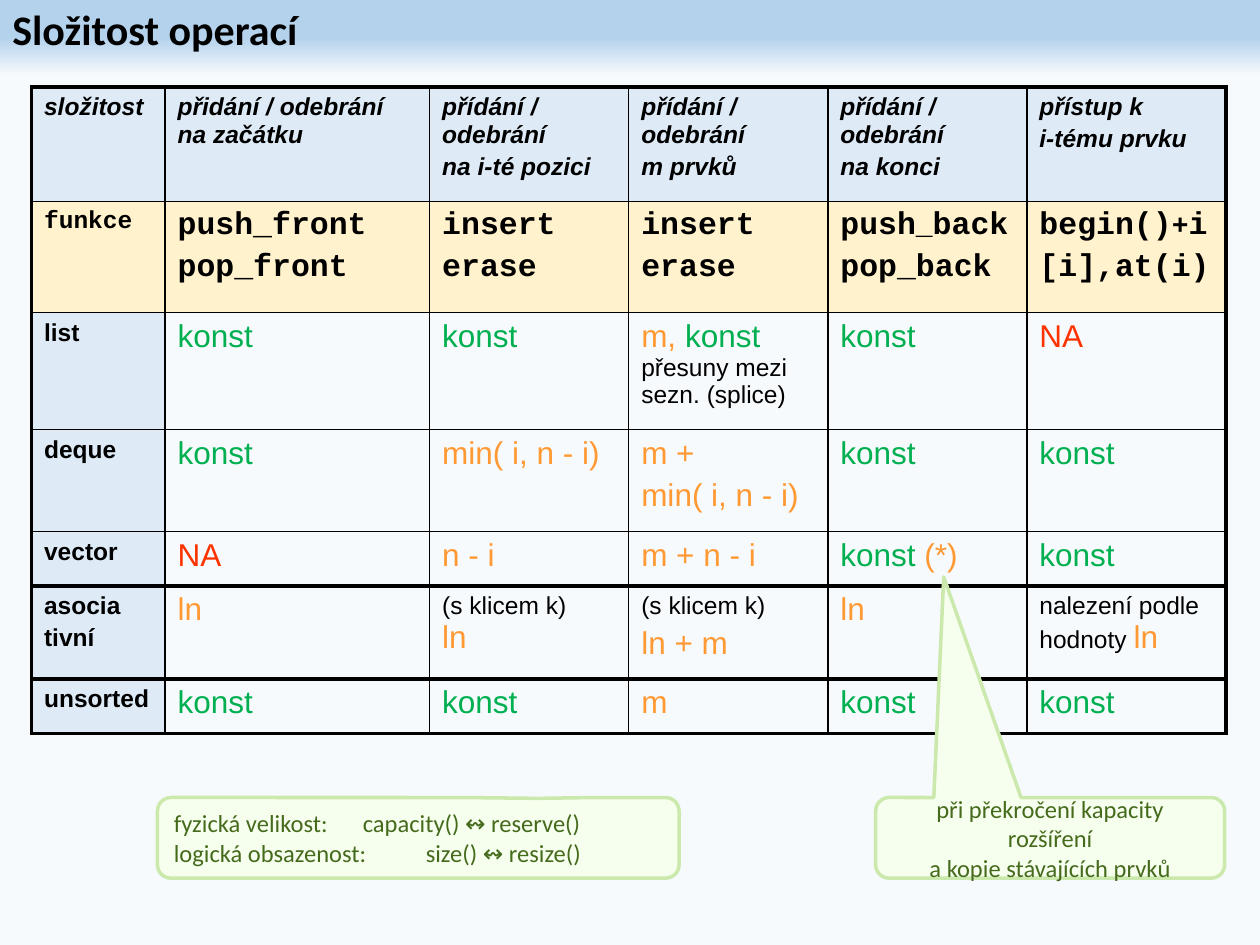
import pptx
import pptx.util
import pptx.dml.color
import pptx.enum.shapes
import pptx.enum.text
import pptx.oxml
from lxml import etree
from pptx.util import Inches

# Text styles: font, size, colour, bold, italic
STYLES = {
    "head": ("Arial", 14, "000000", True, True),
    "label": ("Arial", 14, "000000", True, False),
    "small code": ("Courier New", 14, "000000", True, False),
    "code": ("Courier New", 18, "000000", True, False),
    "sign": ("Courier New", 16, "000000", True, False),
    "good": ("Arial", 18, "00B050", False, False),
    "fair": ("Arial", 18, "FF9933", False, False),
    "bad": ("Arial", 18, "FF3300", False, False),
    "remark": ("Arial", 14, "000000", False, False),
    "callout": ("Calibri", 14, "456A1C", False, False),
    "title": ("Calibri", 24, "000000", True, False),
}


def lines(style, *texts):
    """One paragraph for each text, all in one style."""
    return [[(text, style)] for text in texts]


# Table content: each cell is a list of paragraphs, each paragraph a list of runs
KONST = lines("good", "konst")
NA = lines("bad", "NA")
LN = lines("fair", "ln")
INSERT = lines("code", "insert", "erase")

ROWS = [
    [lines("head", "složitost"),
     lines("head", "přidání / odebrání na začátku"),
     lines("head", "přídání / odebrání", "na i-té pozici"),
     lines("head", "přídání / odebrání", "m prvků"),
     lines("head", "přídání / odebrání", "na konci"),
     lines("head", "přístup k", "i-tému prvku")],
    [lines("small code", "funkce"),
     lines("code", "push_front", "pop_front"),
     INSERT,
     INSERT,
     [[("push", "code"), ("_", "sign"), ("back", "code")], [("pop_back", "code")]],
     [[("begin()", "code"), ("+", "sign"), ("i", "code")], [("[i],at(i)", "code")]]],
    [lines("label", "list"), KONST, KONST,
     [[("m, ", "fair"), ("konst\n", "good"), ("přesuny mezi sezn. (splice)", "remark")]],
     KONST, NA],
    [lines("label", "deque"), KONST, lines("fair", "min( i, n - i)"),
     lines("fair", "m +", "min( i, n - i)"), KONST, KONST],
    [lines("label", "vector"), NA, lines("fair", "n - i"), lines("fair", "m + n - i"),
     [[("konst ", "good"), ("(*)", "fair")]], KONST],
    [lines("label", "asocia", "tivní"), LN,
     [[("(s klicem k)\n", "remark"), ("ln", "fair")]],
     lines("remark", "(s klicem k)") + lines("fair", "ln + m"),
     LN,
     [[("nalezení podle hodnoty ", "remark"), ("ln", "fair")]]],
    [lines("label", "unsorted"), KONST, KONST, lines("fair", "m"), KONST, KONST],
]
COLUMN_WIDTHS = [1.06, 2.1] + [1.58] * 4
ROW_HEIGHTS = [0.91, 0.88, 0.93, 0.81, 0.43, 0.74, 0.43]
THICK_ROW_EDGES = {0, 5, 6, 7}
THICK_COLUMN_EDGES = {0, 6}
ROW_FILLS = {0: "DEEBF7", 1: "FFF2CC"}
LABEL_FILL = "DEEBF7"

# Callouts: left, width, pointer adjustments, alignment, paragraphs
ALIGN = pptx.enum.text.PP_ALIGN
CALLOUTS = [
    (6.95, 2.77, (-0.305, -3.236, 0.167), ALIGN.CENTER,
     lines("callout", "při překročení kapacity rozšíření\na kopie stávajících prvků")),
    (1.25, 4.14, (0.231, -0.489, 0.167), ALIGN.LEFT,
     lines("callout", "fyzická velikost:\tcapacity() ↭ reserve()",
           "logická obsazenost:\tsize() ↭ resize()")),
]
BACKGROUND_STOPS = [(0, "B5D2EC"), (4, "B5D2EC"), (8, "F7FAFD")]


def color(value):
    return pptx.dml.color.RGBColor.from_string(value)


def set_font(font, style):
    font.name, size, value, font.bold, font.italic = STYLES[style]
    font.size = pptx.util.Pt(size)
    font.color.rgb = color(value)


def write(frame, paragraphs, align=ALIGN.LEFT, gap=0.0):
    """Fill a text frame; gap is the space between paragraphs per text size."""
    for index, spans in enumerate(paragraphs):
        para = frame.paragraphs[0] if index == 0 else frame.add_paragraph()
        para.alignment = align
        if index and gap:
            para.space_before = pptx.util.Pt(gap * STYLES[spans[0][1]][1])
        uniform = len({style for _, style in spans}) == 1
        if uniform:
            set_font(para.font, spans[0][1])
        for text, style in spans:
            for number, piece in enumerate(text.split("\n")):
                if number:
                    para.add_line_break()
                if piece:
                    span = para.add_run()
                    span.text = piece
                    if not uniform:
                        set_font(span.font, style)


def add_element(parent, tag, **attributes):
    return etree.SubElement(parent, pptx.oxml.ns.qn(tag), attributes)


def set_borders(cell, row, column):
    edges = [("a:lnL", column in THICK_COLUMN_EDGES),
             ("a:lnR", column + 1 in THICK_COLUMN_EDGES),
             ("a:lnT", row in THICK_ROW_EDGES),
             ("a:lnB", row + 1 in THICK_ROW_EDGES)]
    properties = cell._tc.get_or_add_tcPr()
    for tag, thick in edges:
        width = pptx.util.Pt(2.25 if thick else 1)
        line = add_element(properties, tag, w=str(int(width)))
        add_element(add_element(line, "a:solidFill"), "a:srgbClr", val="000000")


def set_background(page):
    fill = page.background.fill
    fill.gradient()
    fill.gradient_angle = 270
    stops = page.element.find(".//" + pptx.oxml.ns.qn("a:gsLst"))
    for stop in list(stops):
        stops.remove(stop)
    for percent, value in BACKGROUND_STOPS:
        stop = add_element(stops, "a:gs", pos=str(percent * 1000))
        add_element(stop, "a:srgbClr", val=value)


def add_operations_table(page):
    table = page.shapes.add_table(
        len(ROWS), len(COLUMN_WIDTHS), Inches(0.25), Inches(0.69),
        Inches(sum(COLUMN_WIDTHS)), Inches(sum(ROW_HEIGHTS))).table
    table.first_row = table.horz_banding = False
    for column, width in zip(table.columns, COLUMN_WIDTHS):
        column.width = Inches(width)
    for row, height in zip(table.rows, ROW_HEIGHTS):
        row.height = Inches(height)
    for r, contents in enumerate(ROWS):
        for c, paragraphs in enumerate(contents):
            cell = table.cell(r, c)
            set_borders(cell, r, c)
            value = ROW_FILLS.get(r, LABEL_FILL if c == 0 else None)
            if value:
                cell.fill.solid()
                cell.fill.fore_color.rgb = color(value)
            else:
                cell.fill.background()
            write(cell.text_frame, paragraphs, gap=0.2)


def add_callout(page, left, width, adjustments, align, paragraphs):
    box = page.shapes.add_shape(
        pptx.enum.shapes.MSO_SHAPE.ROUNDED_RECTANGULAR_CALLOUT,
        Inches(left), Inches(6.33), Inches(width), Inches(0.64))
    for index, value in enumerate(adjustments):
        box.adjustments[index] = value
    box.shadow.inherit = False
    box.fill.solid()
    box.fill.fore_color.rgb = color("F6FFED")
    box.line.color.rgb = color("CCE9AD")
    box.line.width = pptx.util.Pt(2)
    box.text_frame.word_wrap = True
    box.text_frame.vertical_anchor = pptx.enum.text.MSO_ANCHOR.MIDDLE
    write(box.text_frame, paragraphs, align)


def main():
    deck = pptx.Presentation()
    deck.slide_width, deck.slide_height = Inches(10), Inches(7.5)
    page = deck.slides.add_slide(deck.slide_layouts[6])
    set_background(page)
    add_operations_table(page)
    for callout in CALLOUTS:
        add_callout(page, *callout)

    # Title
    title = page.shapes.add_textbox(0, 0, Inches(10), Inches(0.51)).text_frame
    title.word_wrap = True
    title.vertical_anchor = pptx.enum.text.MSO_ANCHOR.MIDDLE
    write(title, lines("title", "Složitost operací"))
    title.paragraphs[0].line_spacing = 0.9

    deck.save("out.pptx")


if __name__ == "__main__":
    main()
